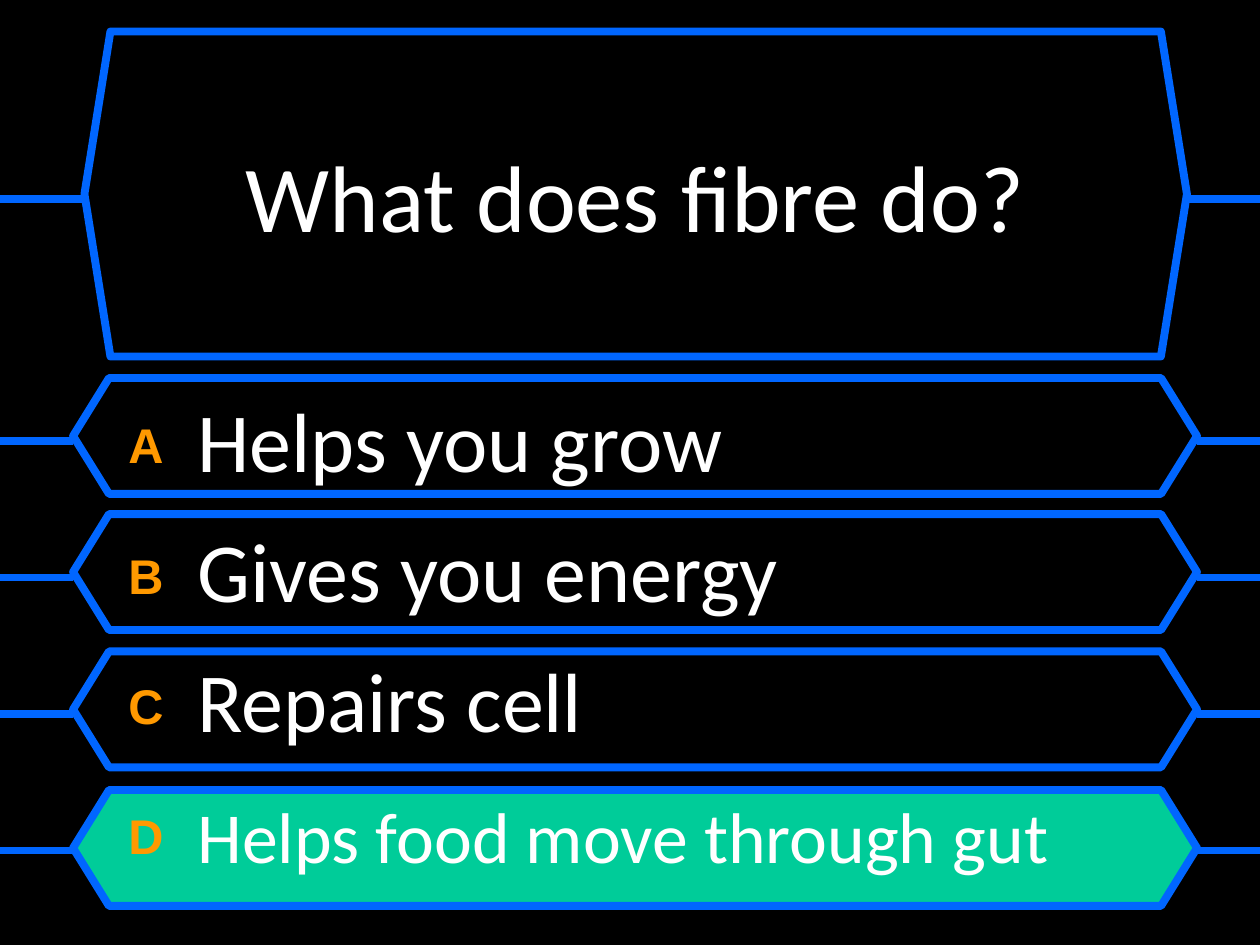
from pptx import Presentation
from pptx.dml.color import RGBColor
from pptx.enum.shapes import MSO_CONNECTOR, MSO_SHAPE
from pptx.enum.text import MSO_ANCHOR, PP_ALIGN
from pptx.oxml.ns import qn
from pptx.util import Inches, Pt

QUESTION = "What does fibre do?"
ANSWERS = [
    ("A", "Helps you grow", 48, 3, "000000"),
    ("B", "Gives you energy", 48, 4.08, "000000"),
    ("C", "Repairs cell", 48, 5.17, "000000"),
    ("D", "Helps food move through gut", 41, 6.27, "00CC99"),
]
BLACK, WHITE, ORANGE, BLUE = "000000", "FFFFFF", "FF9900", "0066FF"
SLIDE_WIDTH = 10
LINE_WIDTH = 4.5
WIRE_PITCH = 3.25 / 3
ANSWER_INDENT = 0.55


def color(value):
    return RGBColor.from_string(value)


def style_line(line):
    line.color.rgb = color(BLUE)
    line.width = Pt(LINE_WIDTH)


def add_frame(slide, left, top, width, height, point, fill):
    frame = slide.shapes.add_shape(
        MSO_SHAPE.HEXAGON, Inches(left), Inches(top), Inches(width), Inches(height)
    )
    frame.adjustments[0] = point
    frame.shadow.inherit = False
    frame.fill.solid()
    frame.fill.fore_color.rgb = color(fill)
    style_line(frame.line)


def add_wires(slide, y, left_end, right_end):
    for start, end in ((left_end, 0), (SLIDE_WIDTH, right_end)):
        wire = slide.shapes.add_connector(
            MSO_CONNECTOR.STRAIGHT, Inches(start), Inches(y), Inches(end), Inches(y)
        )
        style_line(wire.line)
        properties = wire._element.spPr
        properties.append(properties.makeelement(qn("a:effectLst"), {}))


def add_run(paragraph, text, size, font_name, text_color, bold=False):
    run = paragraph.add_run()
    run.text = text
    run.font.size = Pt(size)
    run.font.name = font_name
    run.font.bold = bold
    run.font.color.rgb = color(text_color)
    return run


def place_question(slide):
    title = slide.shapes.title
    title.left, title.top = Inches(0.83), Inches(0.42)
    title.width, title.height = Inches(8.42), Inches(2.25)
    title.text_frame.vertical_anchor = MSO_ANCHOR.MIDDLE
    paragraph = title.text_frame.paragraphs[0]
    paragraph.alignment = PP_ALIGN.CENTER
    add_run(paragraph, QUESTION, 54, "Calibri", WHITE)


def add_answers(slide):
    box = slide.shapes.add_textbox(Inches(0.92), Inches(2.95), Inches(8.33), Inches(4.3))
    frame = box.text_frame
    frame.word_wrap = True
    for index, (letter, answer, size, _, _) in enumerate(ANSWERS):
        paragraph = frame.add_paragraph() if index else frame.paragraphs[0]
        if index:
            paragraph.space_before = Pt(9.6)
        indent = Inches(ANSWER_INDENT)
        properties = paragraph._p.get_or_add_pPr()
        properties.set("marL", str(indent))
        properties.set("indent", str(-indent))
        label = add_run(paragraph, letter, 48, "Arial", ORANGE, bold=True)
        label.font._element.set("baseline", "10000")
        add_run(paragraph, "\t", 54, "Calibri", WHITE)
        add_run(paragraph, answer, size, "Calibri", WHITE)


def main():
    deck = Presentation()
    deck.slide_width, deck.slide_height = Inches(SLIDE_WIDTH), Inches(7.5)
    slide = deck.slides.add_slide(deck.slide_layouts[5])
    slide.background.fill.solid()
    slide.background.fill.fore_color.rgb = color(BLACK)

    add_frame(slide, 0.67, 0.25, 8.75, 2.58, 0.08, BLACK)
    add_wires(slide, 1.58, 0.67, 9.42)
    for index, (_, _, _, top, fill) in enumerate(ANSWERS):
        add_frame(slide, 0.58, top, 8.92, 0.92, 0.31, fill)
        add_wires(slide, 3.5 + index * WIRE_PITCH, 0.58, 9.5)

    place_question(slide)
    add_answers(slide)
    title = slide.shapes.title._element
    title.getparent().append(title)
    deck.save("out.pptx")


if __name__ == "__main__":
    main()
